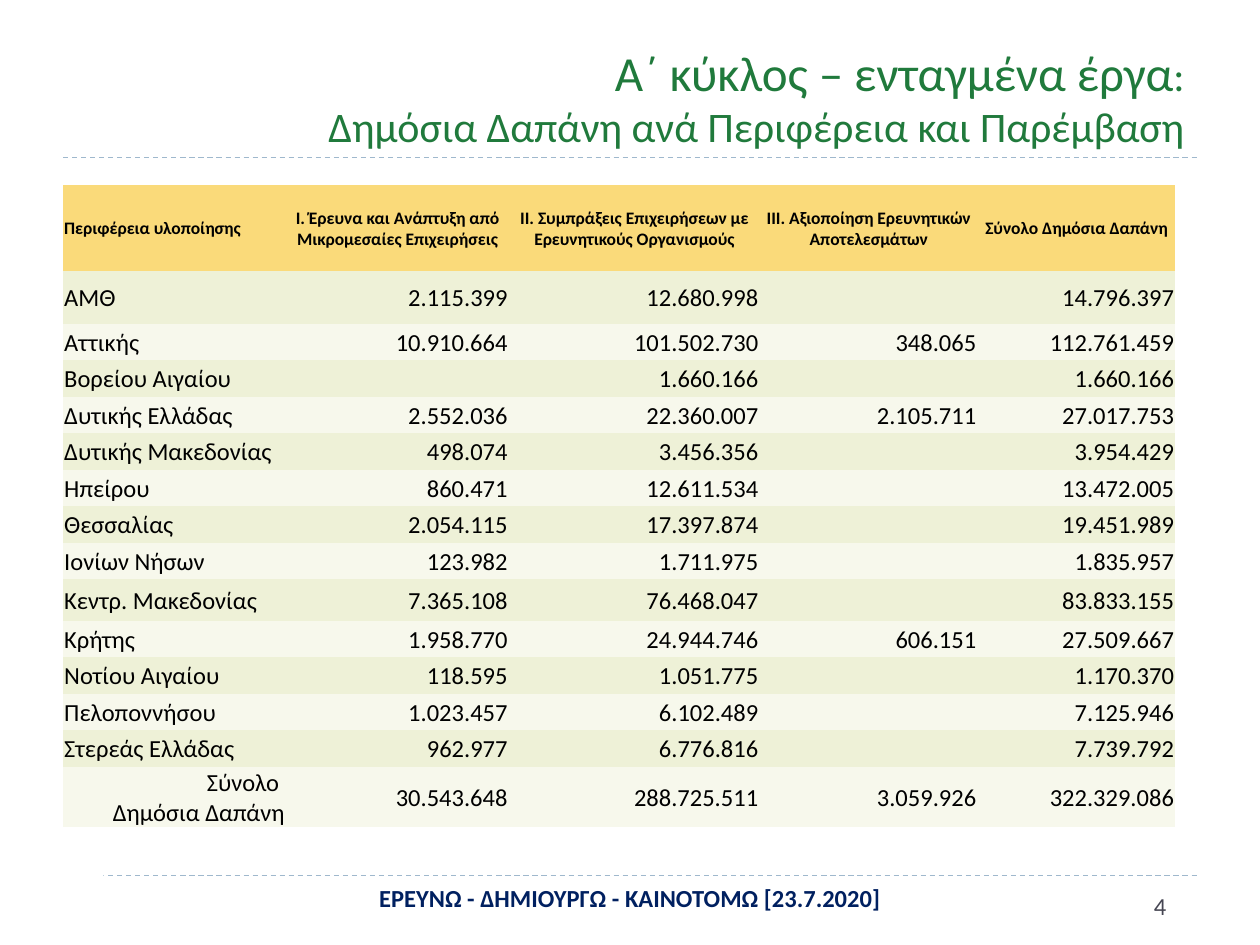
import dataclasses
import typing

import lxml.etree
import pptx
import pptx.dml.color
import pptx.enum.dml
import pptx.enum.shapes
import pptx.enum.text
import pptx.oxml.ns
import pptx.util

Inches = pptx.util.Inches
Align = pptx.enum.text.PP_ALIGN
Anchor = pptx.enum.text.MSO_ANCHOR


@dataclasses.dataclass(frozen=True)
class Theme:
    font: str = "Calibri"
    title: str = "207A3C"
    footer: str = "002060"
    number: str = "464653"
    ink: str = "000000"
    rule: str = "9FB8CD"
    paper: str = "FFFFFF"
    header: str = "FADA7A"
    bands: tuple[str, str] = ("EEF1D7", "F7F8EC")
    title_size: int = 28
    subtitle_size: int = 24
    body_size: int = 14
    header_size: int = 10


@dataclasses.dataclass(frozen=True)
class Style:
    size: int
    color: str
    bold: bool = False
    align: Align = Align.LEFT


class Region(typing.NamedTuple):
    name: str
    research: str
    partnerships: str
    exploitation: str
    total: str


THEME = Theme()
NO_TABLE_STYLE = "{2D5ABB26-0587-4C30-8999-92F81FD0307C}"
COLUMN_WIDTHS = (1.77, 1.77, 1.99, 1.73, 1.57)
ROW_HEIGHTS = (0.68, 0.42, *[0.29] * 7, 0.33, *[0.29] * 4, 0.48)
HEADERS = (
    "Περιφέρεια υλοποίησης",
    "I. Έρευνα και Ανάπτυξη από Μικρομεσαίες Επιχειρήσεις",
    "II. Συμπράξεις Επιχειρήσεων με Ερευνητικούς Οργανισμούς",
    "III. Αξιοποίηση Ερευνητικών Αποτελεσμάτων",
    "Σύνολο Δημόσια Δαπάνη",
)
REGIONS = (
    Region("ΑΜΘ", "2.115.399", "12.680.998", "", "14.796.397"),
    Region("Αττικής", "10.910.664", "101.502.730", "348.065", "112.761.459"),
    Region("Βορείου Αιγαίου", "", "1.660.166", "", "1.660.166"),
    Region("Δυτικής Ελλάδας", "2.552.036", "22.360.007", "2.105.711", "27.017.753"),
    Region("Δυτικής Μακεδονίας", "498.074", "3.456.356", "", "3.954.429"),
    Region("Ηπείρου", "860.471", "12.611.534", "", "13.472.005"),
    Region("Θεσσαλίας", "2.054.115", "17.397.874", "", "19.451.989"),
    Region("Ιονίων Νήσων", "123.982", "1.711.975", "", "1.835.957"),
    Region("Κεντρ. Μακεδονίας", "7.365.108", "76.468.047", "", "83.833.155"),
    Region("Κρήτης", "1.958.770", "24.944.746", "606.151", "27.509.667"),
    Region("Νοτίου Αιγαίου", "118.595", "1.051.775", "", "1.170.370"),
    Region("Πελοποννήσου", "1.023.457", "6.102.489", "", "7.125.946"),
    Region("Στερεάς Ελλάδας", "962.977", "6.776.816", "", "7.739.792"),
    Region("Σύνολο \nΔημόσια Δαπάνη", "30.543.648", "288.725.511", "3.059.926", "322.329.086"),
)


def rgb(color: str) -> pptx.dml.color.RGBColor:
    return pptx.dml.color.RGBColor.from_string(color)


def write_text(frame, text: str, style: Style) -> None:
    frame.text = text
    for para in frame.paragraphs:
        para.alignment = style.align
        for span in para.runs:
            span.font.name = THEME.font
            span.font.size = pptx.util.Pt(style.size)
            span.font.bold = style.bold
            span.font.color.rgb = rgb(style.color)
        if not para.runs:
            end = lxml.etree.SubElement(para._p, pptx.oxml.ns.qn("a:endParaRPr"))
            end.set("sz", str(style.size * 100))


def add_text(slide, left: float, top: float, width: float, height: float,
             text: str, style: Style, anchor: Anchor = Anchor.TOP):
    box = slide.shapes.add_textbox(Inches(left), Inches(top), Inches(width), Inches(height))
    box.text_frame.word_wrap = True
    box.text_frame.vertical_anchor = anchor
    write_text(box.text_frame, text, style)
    return box


def add_rule(slide, y: float) -> None:
    rule = slide.shapes.add_connector(
        pptx.enum.shapes.MSO_CONNECTOR.STRAIGHT, Inches(0.5), Inches(y), Inches(9.5), Inches(y))
    rule.line.color.rgb = rgb(THEME.rule)
    rule.line.width = pptx.util.Pt(0.75)
    rule.line.dash_style = pptx.enum.dml.MSO_LINE.DASH
    lxml.etree.SubElement(rule._element.spPr, pptx.oxml.ns.qn("a:effectLst"))


def add_footer_patch(slide) -> None:
    patch = slide.shapes.add_shape(pptx.enum.shapes.MSO_SHAPE.RECTANGLE,
                                   Inches(0.43), Inches(6.85), Inches(0.39), Inches(0.44))
    patch.shadow.inherit = False
    patch.fill.solid()
    patch.fill.fore_color.rgb = rgb(THEME.paper)
    patch.line.fill.background()


def add_title(slide) -> None:
    style = Style(THEME.subtitle_size, THEME.title, align=Align.RIGHT)
    heading = "Α΄ κύκλος – ενταγμένα έργα"
    box = add_text(slide, 1.22, 0.17, 8.28, 1.08, heading, style, Anchor.BOTTOM)
    para = box.text_frame.paragraphs[0]
    para.runs[0].font.size = pptx.util.Pt(THEME.title_size)
    for text in (":", "Δημόσια Δαπάνη ανά Περιφέρεια και Παρέμβαση"):
        span = para.add_run()
        span.text = text
        span.font.name = THEME.font
        span.font.size = pptx.util.Pt(style.size)
        span.font.color.rgb = rgb(style.color)
        if text == ":":
            para.add_line_break()


def fill_cell(cell, text: str, style: Style, color: str) -> None:
    cell.margin_left = cell.margin_right = cell.margin_top = Inches(0.01)
    cell.margin_bottom = 0
    cell.vertical_anchor = Anchor.MIDDLE
    cell.fill.solid()
    cell.fill.fore_color.rgb = rgb(color)
    write_text(cell.text_frame, text, style)


def add_spending_table(slide) -> None:
    frame = slide.shapes.add_table(
        len(ROW_HEIGHTS), len(COLUMN_WIDTHS), Inches(0.5), Inches(1.47),
        Inches(sum(COLUMN_WIDTHS)), Inches(sum(ROW_HEIGHTS)))
    table = frame.table
    table.horz_banding = False
    table.first_row = False
    table._tbl.tblPr.find(pptx.oxml.ns.qn("a:tableStyleId")).text = NO_TABLE_STYLE
    for column, width in zip(table.columns, COLUMN_WIDTHS):
        column.width = Inches(width)
    for row, height in zip(table.rows, ROW_HEIGHTS):
        row.height = Inches(height)
    for column, text in enumerate(HEADERS):
        align = Align.CENTER if column else Align.LEFT
        style = Style(THEME.header_size, THEME.ink, True, align)
        fill_cell(table.cell(0, column), text, style, THEME.header)
    for row, region in enumerate(REGIONS, start=1):
        for column, text in enumerate(region):
            align = Align.RIGHT if column or row == len(REGIONS) else Align.LEFT
            style = Style(THEME.body_size, THEME.ink, align=align)
            fill_cell(table.cell(row, column), text, style, THEME.bands[(row - 1) % 2])


def main() -> None:
    deck = pptx.Presentation()
    deck.slide_width = Inches(10)
    deck.slide_height = Inches(7.5)
    slide = deck.slides.add_slide(deck.slide_layouts[6])
    for y in (6.95, 1.25):
        add_rule(slide, y)
    add_footer_patch(slide)
    add_title(slide)
    add_text(slide, 2.73, 6.96, 4.54, 0.31, "ΕΡΕΥΝΩ - ΔΗΜΙΟΥΡΓΩ - ΚΑΙΝΟΤΟΜΩ [23.7.2020]",
             Style(THEME.body_size, THEME.footer, True, Align.CENTER))
    add_text(slide, 9.06, 7.02, 0.5, 0.4, "4", Style(THEME.body_size, THEME.number))
    add_spending_table(slide)
    deck.save("out.pptx")


if __name__ == "__main__":
    main()
